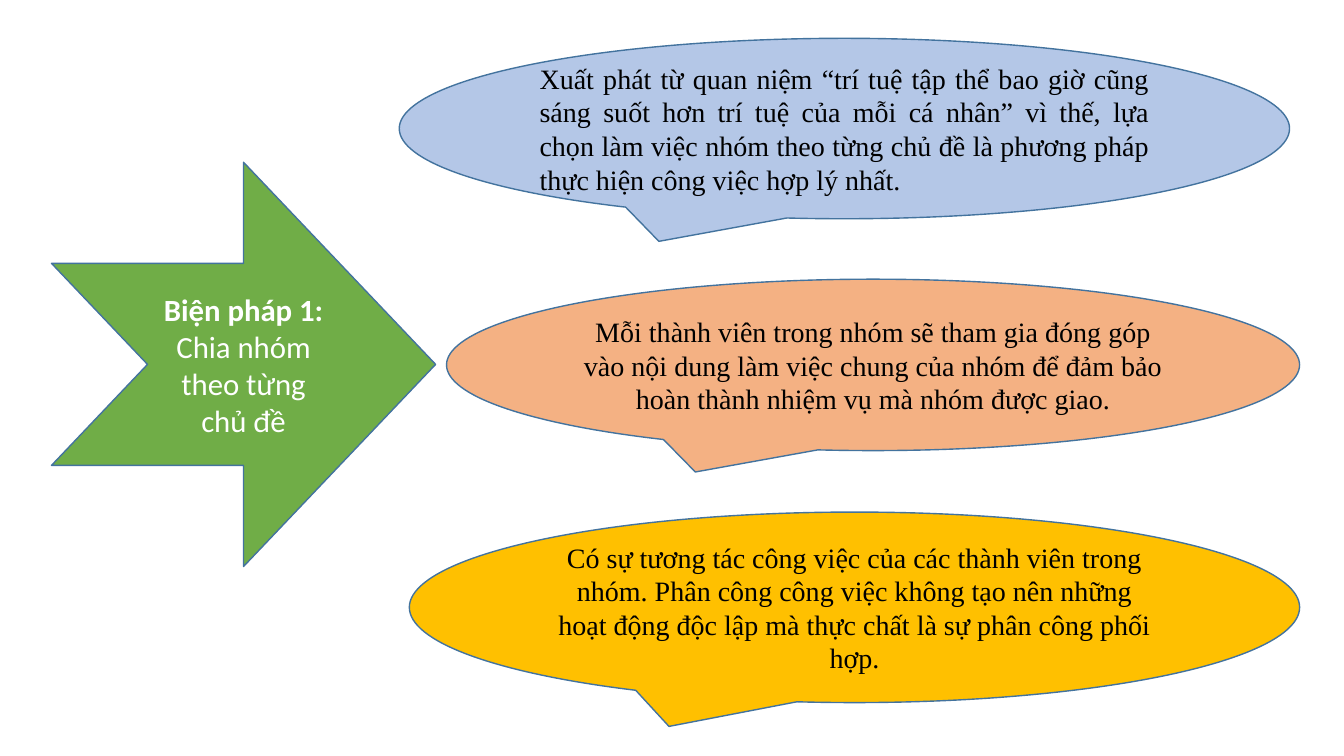
from pptx import Presentation
from pptx.dml.color import RGBColor as Rgb
from pptx.enum.shapes import MSO_SHAPE as Preset
from pptx.enum.text import MSO_ANCHOR as Anchor, PP_ALIGN as Align
from pptx.util import Inches, Pt

COLOURS = {
    "outline": "43739E", "arrow": "70AD47", "white": "FFFFFF", "black": "000000",
    "blue": "B4C7E7", "orange": "F4B183", "gold": "FFC000",
}


class SlideBuilder:
    """Style and current slide; places are percentages of the slide's size."""

    def __init__(self, deck):
        self.page = deck.slides.add_slide(deck.slide_layouts[6])
        self.column = deck.slide_width / 100
        self.row = deck.slide_height / 100

    def colour(self, name):
        return Rgb.from_string(COLOURS[name])

    def shape(self, preset, place, fill):
        left, top, width, height = place
        box = self.page.shapes.add_shape(
            preset, round(left * self.column), round(top * self.row),
            round(width * self.column), round(height * self.row))
        box.shadow.inherit = False
        box.fill.solid()
        box.fill.fore_color.rgb = self.colour(fill)
        box.line.color.rgb = self.colour("outline")
        box.line.width = Pt(1)
        return box

    def text(self, box, spans, font, size, colour, align):
        frame = box.text_frame
        frame.word_wrap = True
        frame.vertical_anchor = Anchor.MIDDLE
        para = frame.paragraphs[0]
        para.alignment = align
        para.font.name, para.font.size = font, Pt(size)
        para.font.color.rgb = self.colour(colour)
        for words, bold in spans:
            span = para.add_run()
            span.text = words
            span.font.bold = bold

    def arrow(self, place, heading, words):
        box = self.shape(Preset.NOTCHED_RIGHT_ARROW, place, "arrow")
        spans = [(heading + " ", True), (words, False)]
        self.text(box, spans, "Calibri", 22, "white", Align.CENTER)

    def callout(self, place, fill, words, align=Align.CENTER):
        box = self.shape(Preset.OVAL_CALLOUT, place, fill)
        self.text(box, [(words, False)], "Times New Roman", 20, "black", align)


def main():
    deck = Presentation()
    deck.slide_width, deck.slide_height = Inches(13.33), Inches(7.5)
    builder = SlideBuilder(deck)

    # Measure on the left
    builder.arrow((3.83, 21.47, 28.58, 53.47),
                  "Biện pháp 1:", "Chia nhóm theo từng chủ đề")

    # Explanations on the right
    builder.callout(
        (29.71, 5.07, 66.24, 23.87), "blue",
        "Xuất phát từ quan niệm “trí tuệ tập thể bao giờ cũng sáng suốt hơn "
        "trí tuệ của mỗi cá nhân” vì thế, lựa chọn làm việc nhóm theo từng "
        "chủ đề là phương pháp thực hiện công việc hợp lý nhất.", Align.JUSTIFY)
    builder.callout(
        (33.23, 36.93, 63.47, 22.67), "orange",
        "Mỗi thành viên trong nhóm sẽ tham gia đóng góp vào nội dung làm việc "
        "chung của nhóm để đảm bảo hoàn thành nhiệm vụ mà nhóm được giao.")
    builder.callout(
        (30.46, 67.73, 66.24, 25.2), "gold",
        "Có sự tương tác công việc của các thành viên trong nhóm. Phân công "
        "công việc không tạo nên những hoạt động độc lập mà thực chất là sự "
        "phân công phối hợp.")

    deck.save("out.pptx")


if __name__ == "__main__":
    main()
